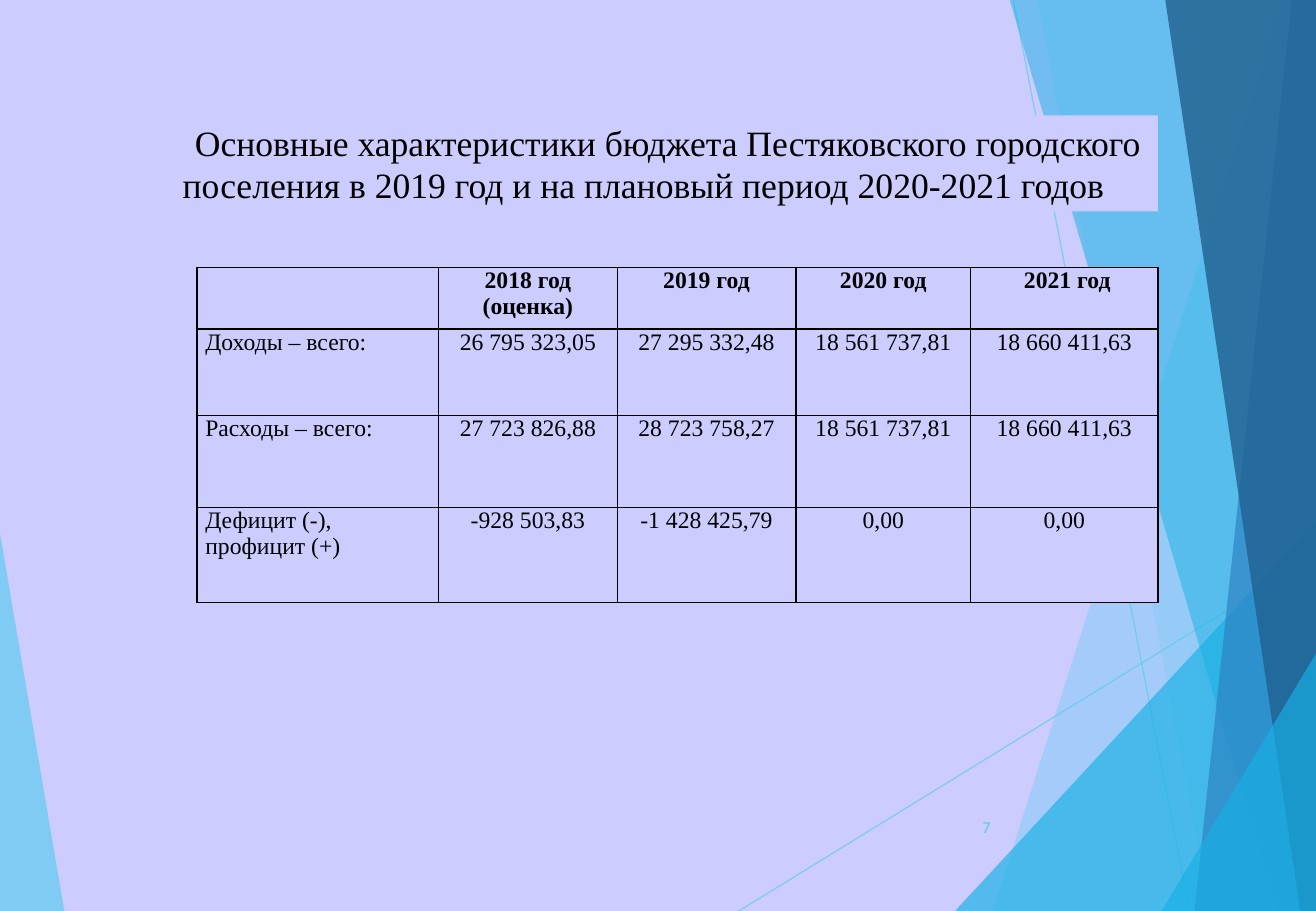
"""Builds the slide with the main budget figures of the Pestyaki settlement."""
from lxml import etree
from pptx import Presentation, util as u
from pptx.dml.color import RGBColor
from pptx.enum import shapes, text
from pptx.oxml import parse_xml
from pptx.oxml.ns import nsdecls, qn

PX = 9144
W, H = 1083, 750
THEME = {
    "lilac": "CCCCFF", "black": "000000", "sky": "5FCBEF", "cyan": "17B0E4",
    "blue": "2E83C3", "navy": "226292",
    "serif": "Times New Roman", "sans": "Cabin",
    "title": 21.1, "table": 14, "number": 9,
}


def paint(fill, color, alpha=100):
    fill.solid()
    fill.fore_color.rgb = RGBColor.from_string(THEME[color])
    if alpha < 100:
        srgb = fill._xPr.find(".//" + qn("a:srgbClr"))
        etree.SubElement(srgb, qn("a:alpha")).set("val", str(alpha * 1000))


def write(tf, words, align, size, font="serif", color="black", bold=False):
    p = tf.paragraphs[0]
    p.alignment = align
    r = p.add_run()
    r.text = words
    style = {"name": THEME[font], "size": u.Pt(THEME[size]), "bold": bold}
    for name, value in style.items():
        setattr(r.font, name, value)
    r.font.color.rgb = RGBColor.from_string(THEME[color])
    return p


prs = Presentation()
prs.slide_width, prs.slide_height = W * PX, H * PX
s = prs.slides.add_slide(prs.slide_layouts[6])
paint(s.background.fill, "lilac")

rays = [((608, 750), (1084, 457)), ((834, 0), (979, 750))]
facets = [
    ([(0, 439), (53, 750), (0, 750)], "sky", 70),
    ([(1056, 0), (817, 750), (W, 750), (W, 0)], "sky", 36),
    ([(854, 0), (996, 750), (W, 750), (W, 0)], "sky", 20),
    ([(786, 750), (W, 429), (W, 750)], "cyan", 66),
    ([(831, 0), (1051, 750), (W, 750), (W, 0)], "cyan", 50),
    ([(1063, 0), (983, 750), (W, 750), (W, 0)], "blue", 70),
    ([(959, 0), (1070, 750), (W, 750), (W, 0)], "navy", 82),
    ([(956, 750), (W, 538), (W, 750)], "cyan", 66),
]

for start, end in rays:
    ends = [v * PX for v in start + end]
    line = s.shapes.add_connector(shapes.MSO_CONNECTOR.STRAIGHT, *ends)
    line.line.width = u.Pt(0.75)
    paint(line.line.fill, "sky", 70)
    etree.SubElement(line._element.spPr, qn("a:effectLst"))

for points, color, alpha in facets:
    outline = s.shapes.build_freeform(*points[0], scale=PX)
    outline.add_line_segments(points[1:], close=True)
    sp = outline.convert_to_shape()
    sp.shadow.inherit = False
    paint(sp.fill, color, alpha)
    sp.line.fill.background()

CENTER, LEFT, RIGHT = text.PP_ALIGN.CENTER, text.PP_ALIGN.LEFT, text.PP_ALIGN.RIGHT
columns = [199, 147, 147, 144, 154]
heights = [51, 71, 76, 78]
budget = [
    ["", "2018 год (оценка)", "2019 год", "2020 год", " 2021 год"],
    ["Доходы – всего:", "26 795 323,05", "27 295 332,48", "18 561 737,81", "18 660 411,63"],
    ["Расходы – всего:", "27 723 826,88", "28 723 758,27", "18 561 737,81", "18 660 411,63"],
    ["Дефицит (-), профицит (+)", "-928 503,83", "-1 428 425,79", "0,00", "0,00"],
]
cell_format = {"margin_left": 7 * PX, "margin_right": 7 * PX,
               "margin_top": 0, "margin_bottom": 0}

table = s.shapes.add_table(len(heights), len(columns), 162 * PX, 220 * PX,
                           sum(columns) * PX, sum(heights) * PX).table
table.first_row = table.horz_banding = False
for column, width in zip(table.columns, columns):
    column.width = width * PX
for i, (row, height) in enumerate(zip(table.rows, heights)):
    row.height = height * PX
    for j, cell in enumerate(row.cells):
        for name, value in cell_format.items():
            setattr(cell, name, value)
        for side in "LRTB":
            cell._tc.get_or_add_tcPr().append(parse_xml(
                f'<a:ln{side} {nsdecls("a")} w="12700"><a:solidFill>'
                f'<a:srgbClr val="{THEME["black"]}"/></a:solidFill></a:ln{side}>'))
        paint(cell.fill, "lilac")
        if budget[i][j]:
            write(cell.text_frame, budget[i][j], CENTER if j else LEFT,
                  "table", bold=i == 0)

sp = s.shapes.add_shape(shapes.MSO_SHAPE.RECTANGLE, 107 * PX, 95 * PX, 846 * PX, 79 * PX)
sp.shadow.inherit = False
paint(sp.fill, "lilac")
sp.line.fill.background()
tf = sp.text_frame
title_format = {"word_wrap": True, "vertical_anchor": text.MSO_ANCHOR.MIDDLE,
                "margin_left": 8 * PX, "margin_right": 8 * PX,
                "margin_top": 4 * PX, "margin_bottom": 4 * PX}
for name, value in title_format.items():
    setattr(tf, name, value)
p = write(tf, "Основные характеристики бюджета Пестяковского городского поселения "
              "в 2019 год и на плановый период 2020-2021 годов", CENTER, "title")
p._p.get_or_add_pPr().set("indent", str(40 * PX))

tf = s.shapes.add_textbox(764 * PX, 661 * PX, 61 * PX, 40 * PX).text_frame
tf.word_wrap = True
tf.vertical_anchor = text.MSO_ANCHOR.MIDDLE
write(tf, "7", RIGHT, "number", "sans", "sky")

prs.save("out.pptx")
